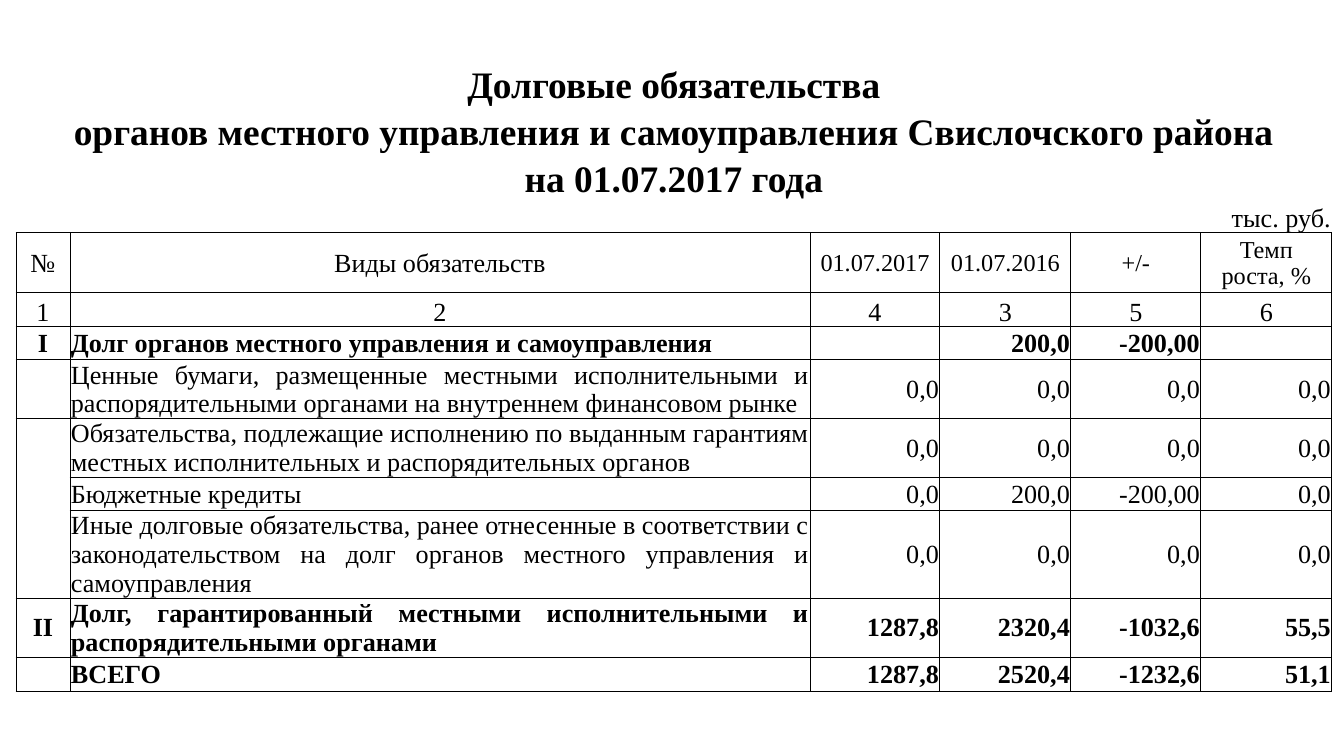
import pptx
import pptx.util
import pptx.dml.color
import pptx.enum.text
import pptx.oxml.ns
from lxml import etree

TITLE = [
    "Долговые обязательства",
    "органов местного управления и самоуправления Свислочского района",
    "на 01.07.2017 года",
]
UNIT = "тыс. руб."
HEAD = ["№", "Виды обязательств", "01.07.2017", "01.07.2016", "+/-", "Темп\nроста, %"]
NUMBERS = ["1", "2", "4", "3", "5", "6"]
DEBTS = [
    ["I", "Долг органов местного управления и самоуправления",
     "", "200,0", "-200,00", ""],
    ["", "Ценные бумаги, размещенные местными исполнительными и "
     "распорядительными органами на внутреннем финансовом рынке",
     "0,0", "0,0", "0,0", "0,0"],
    ["", "Обязательства, подлежащие исполнению по выданным гарантиям "
     "местных исполнительных и распорядительных органов",
     "0,0", "0,0", "0,0", "0,0"],
    ["", "Бюджетные кредиты", "0,0", "200,0", "-200,00", "0,0"],
    ["", "Иные долговые обязательства, ранее отнесенные в соответствии с "
     "законодательством на долг органов местного управления и самоуправления",
     "0,0", "0,0", "0,0", "0,0"],
    ["II", "Долг, гарантированный местными исполнительными и "
     "распорядительными органами",
     "1287,8", "2320,4", "-1032,6", "55,5"],
    ["", "ВСЕГО", "1287,8", "2520,4", "-1232,6", "51,1"],
]
BOLD = {0, 5, 6}
DETAIL = range(1, 5)

COLORS = {"ink": "000000", "paper": "FFFFFF"}
FONT = "Times New Roman"
NO_STYLE = "{2D5ABB26-0587-4C30-8999-92F81FD0307C}"
PX = 914400 / 134.4
LEFT, TOP = 16, 60
COLS = [54, 740, 130, 131, 130, 131]
ROWS = [47, 47, 47, 32, 60, 34, 29, 59, 58, 33, 87, 59, 34]

ALIGN = pptx.enum.text.PP_ALIGN
ANCHOR = pptx.enum.text.MSO_ANCHOR
Pt = pptx.util.Pt
qn = pptx.oxml.ns.qn


def emu(px):
    return pptx.util.Emu(round(px * PX))


def color(name):
    return pptx.dml.color.RGBColor.from_string(COLORS[name])


def write(cell, text, size=14, bold=False, align=ALIGN.CENTER, anchor=ANCHOR.MIDDLE):
    cell.margin_left = cell.margin_right = cell.margin_top = emu(1)
    cell.margin_bottom = 0
    cell.vertical_anchor = anchor
    frame = cell.text_frame
    for i, line in enumerate(text.split("\n")):
        para = frame.add_paragraph() if i else frame.paragraphs[0]
        para.alignment = align
        if line:
            run = para.add_run()
            run.text = line
            run.font.name = FONT
            run.font.size = Pt(size)
            run.font.bold = bold
            run.font.color.rgb = color("ink")
        else:
            etree.SubElement(para._p, qn("a:endParaRPr"), sz=str(size * 100))


def border(cell, sides):
    """Rule the given sides, listed in the order L, R, T, B."""
    props = cell._tc.get_or_add_tcPr()
    for side in sides:
        line = etree.SubElement(props, qn("a:ln" + side), w=str(Pt(0.5)))
        fill = etree.SubElement(line, qn("a:solidFill"))
        etree.SubElement(fill, qn("a:srgbClr"), val=COLORS["ink"])


def paint(cell, name=None):
    if name:
        cell.fill.solid()
        cell.fill.fore_color.rgb = color(name)
    else:
        cell.fill.background()


def main():
    deck = pptx.Presentation()
    deck.slide_width, deck.slide_height = emu(1344), emu(756)
    slide = deck.slides.add_slide(deck.slide_layouts[6])
    frame = slide.shapes.add_table(len(ROWS), len(COLS), emu(LEFT), emu(TOP),
                                   emu(sum(COLS)), emu(sum(ROWS)))
    table = frame.table
    table.first_row = table.horz_banding = False
    table._tbl.tblPr.find(qn("a:tableStyleId")).text = NO_STYLE
    for col, width in zip(table.columns, COLS):
        col.width = emu(width)
    for row, height in zip(table.rows, ROWS):
        row.height = emu(height)

    for r, text in enumerate(TITLE + [UNIT]):
        unit = text == UNIT
        for c in range(len(COLS)):
            border(table.cell(r, c), "B" if unit else "")
            paint(table.cell(r, c))
        cell = table.cell(r, 0)
        cell.merge(table.cell(r, len(COLS) - 1))
        write(cell, text, size=14 if unit else 20, bold=not unit,
              align=ALIGN.RIGHT if unit else ALIGN.CENTER, anchor=ANCHOR.BOTTOM)

    top = len(TITLE) + 1
    for c, (name, number) in enumerate(zip(HEAD, NUMBERS)):
        head, index = table.cell(top, c), table.cell(top + 1, c)
        write(head, name, size=13 if c > 1 else 14)
        write(index, number, anchor=ANCHOR.BOTTOM)
        for cell in (head, index):
            border(cell, "LRTB")
            paint(cell)

    for d, debt in enumerate(DEBTS):
        for c, text in enumerate(debt):
            cell = table.cell(top + 2 + d, c)
            align = (ALIGN.CENTER, ALIGN.JUSTIFY, ALIGN.RIGHT)[min(c, 2)]
            write(cell, text, bold=d in BOLD, align=align)
            sides = "LRTB"
            if c == 0 and d in DETAIL:
                sides = "LR" + "T" * (d == DETAIL[0]) + "B" * (d == DETAIL[-1])
            border(cell, sides)
            paint(cell, "paper" if c > 1 else None)

    deck.save("out.pptx")


if __name__ == "__main__":
    main()
